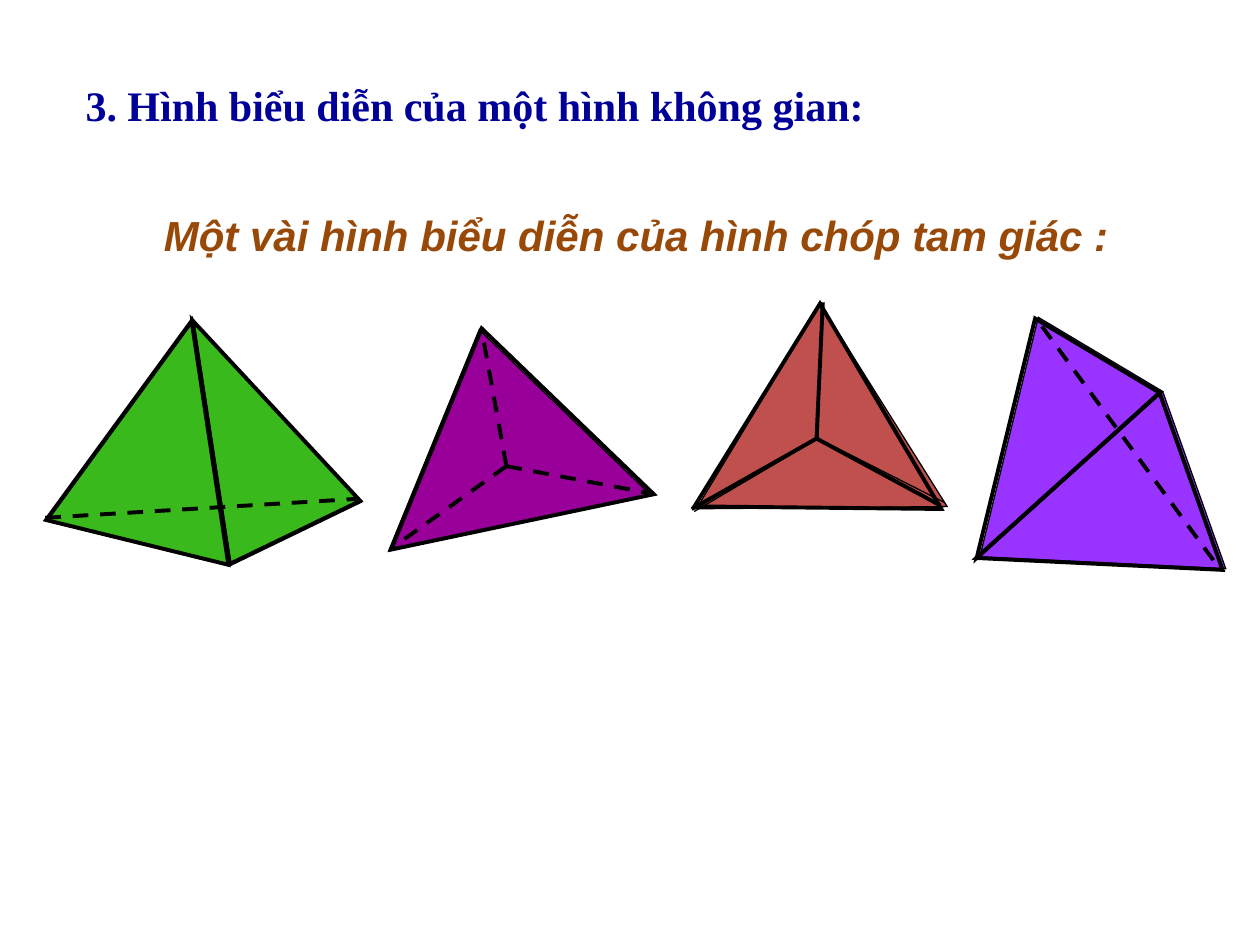
from pptx import Presentation
from pptx.dml.color import RGBColor
from pptx.enum.dml import MSO_LINE as Dash
from pptx.enum.shapes import MSO_CONNECTOR as Conn, MSO_SHAPE as Kind
from pptx.enum.text import PP_ALIGN as Align
from pptx.oxml.ns import qn
from pptx.util import Pt
from lxml.etree import SubElement as Sub

BLACK = RGBColor(0x00, 0x00, 0x00)
NAVY = RGBColor(0x00, 0x00, 0x99)
BROWN = RGBColor(0x98, 0x48, 0x07)
GREEN = RGBColor(0x39, 0xB9, 0x1B)
PLUM = RGBColor(0x99, 0x00, 0x99)
RED = RGBColor(0xC0, 0x50, 0x4D)
VIOLET = RGBColor(0x99, 0x33, 0xFF)
THIN, THICK = 0.75, 2.25


def ink(line, width):
    line.color.rgb = BLACK
    line.width = Pt(width)


def face(slide, box, turn, fill=None):
    """Triangle: thin edge when filled, thick edge when hollow."""
    shape = slide.shapes.add_shape(Kind.ISOSCELES_TRIANGLE, *map(Pt, box))
    shape.rotation = turn
    shape.shadow.inherit = False
    if fill is None:
        shape.fill.background()
    else:
        shape.fill.solid()
        shape.fill.fore_color.rgb = fill
    ink(shape.line, THICK if fill is None else THIN)
    # Sharp corners
    Sub(shape.line._get_or_add_ln(), qn("a:miter"), lim="800000")


def edge(slide, start, end, width=THICK, dash=False):
    line = slide.shapes.add_connector(Conn.STRAIGHT, *map(Pt, start + end))
    ink(line.line, width)
    if dash:
        line.line.dash_style = Dash.DASH
    Sub(line._element.spPr, qn("a:effectLst"))


def solid(slide, faces, fill, shift):
    """Filled faces, then the same faces in outline, moved by shift."""
    for box, turn in faces:
        face(slide, box, turn, fill)
    for (x, y, w, h), turn in faces:
        face(slide, (x + shift[0], y + shift[1], w, h), turn)


def style(run, font, size, color, bold=True, slant=False):
    run.font.name = font
    run.font.size = Pt(size)
    run.font.color.rgb = color
    run.font.bold = bold
    run.font.italic = slant


def label(slide, box, wrap):
    frame = slide.shapes.add_textbox(*map(Pt, box)).text_frame
    frame.word_wrap = wrap
    return frame.paragraphs[0]


def main():
    prs = Presentation()
    prs.slide_width, prs.slide_height = Pt(720), Pt(540)
    slide = prs.slides.add_slide(prs.slide_layouts[6])

    # Heading
    para = label(slide, (41.8, 41.8, 463.7, 36), False)
    para.text = "3. Hình biểu diễn của một hình không gian:"
    style(para.runs[0], "Times New Roman", 24, NAVY)

    # Green pyramid
    solid(slide, [((98.6, 177.1, 82.8, 134.6), 334.2),
                  ((41, 182.2, 107.3, 130.3), 13.8)], GREEN, (-0.7, -0.7))
    edge(slide, (25.9, 295.9), (203.8, 285.1), dash=True)

    # Plum pyramid, hidden vertex at the back
    solid(slide, [((208.8, 187.2, 153.4, 113), 348.1)], PLUM, (1.4, -0.7))
    for tip in ((223.9, 313.2), (275, 187.2), (373, 282.2)):
        edge(slide, (289.4, 266.4), tip, dash=True)

    # Red pyramid, seen from above
    face(slide, (397.4, 173.5, 143.3, 116.6), 359.5, RED)
    for tip in ((396.7, 292.3), (469.4, 172.8), (540, 287.3)):
        edge(slide, (467.5, 250.6), tip, THIN)
    face(slide, (397.4, 173.5, 141.1, 116.6), 0.6)
    for tip in ((395.3, 290.9), (470.2, 172.8), (537.1, 288.7)):
        edge(slide, (466.6, 250.6), tip)

    # Violet pyramid
    solid(slide, [((553, 193, 82.8, 134.6), 210.8),
                  ((567.4, 231.1, 107.3, 130.3), 250.4)], VIOLET, (-1.8, 0.7))
    edge(slide, (595.4, 186.5), (696.2, 324), dash=True)

    # Caption
    para = label(slide, (0, 108, 720, 51), True)
    para.alignment = Align.CENTER
    para.space_before = Pt(6)
    lead, text = para.add_run(), para.add_run()
    lead.text = " "
    text.text = "Một vài hình biểu diễn của hình chóp tam giác :"
    style(lead, "Calibri", 32, BLACK, bold=False)
    style(text, "Arial", 24, BROWN, slant=True)

    prs.save("out.pptx")


if __name__ == "__main__":
    main()
